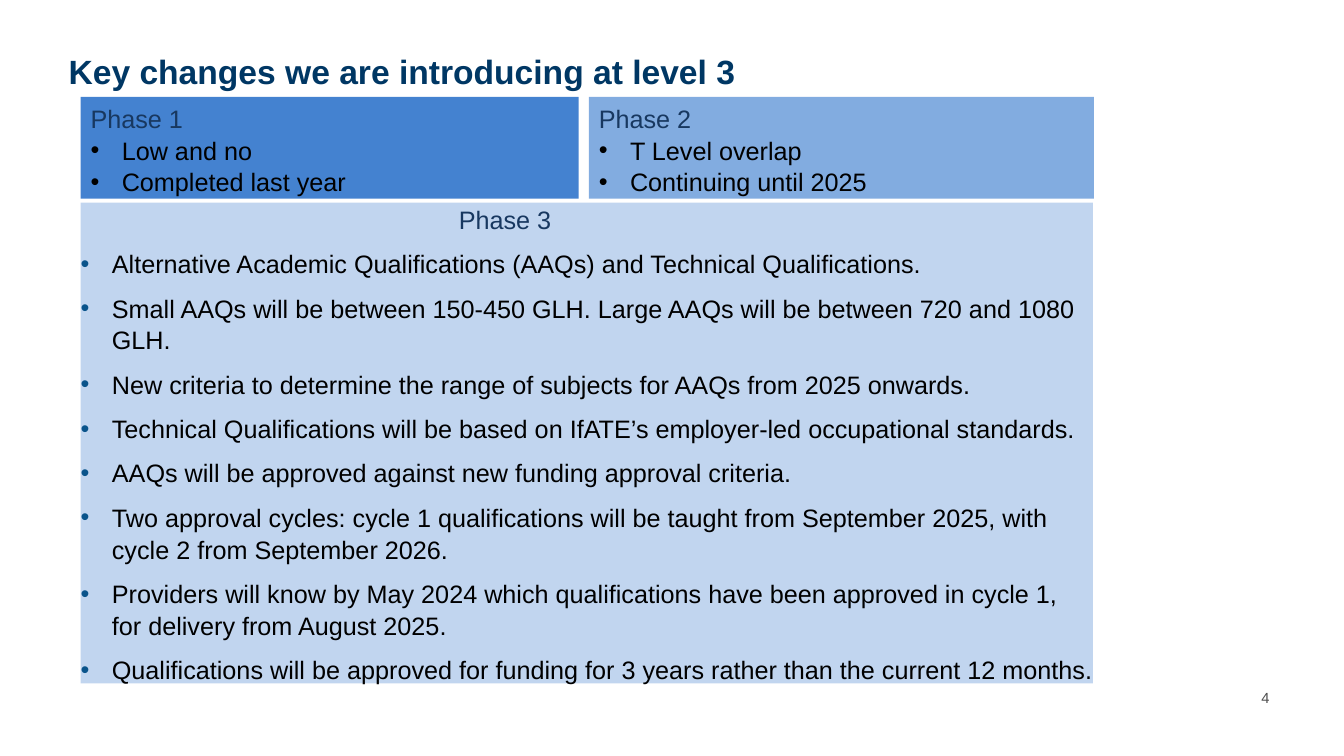
from lxml.etree import SubElement
from pptx import Presentation
from pptx.dml.color import RGBColor
from pptx.enum.shapes import MSO_SHAPE as SHAPE
from pptx.enum.text import MSO_ANCHOR as ANCHOR, MSO_AUTO_SIZE as AUTO, PP_ALIGN as ALIGN
from pptx.oxml.ns import qn
from pptx.util import Inches, Pt

COLORS = {"title": "003764", "heading": "183860", "text": "000000", "bullet": "0A548B",
          "number": "4D4D4D", "phase1": "4482D0", "phase2": "82ACE0", "phase3": "C1D5EF"}
INDENT = 0.31


def write(paragraph, text, size, color, bold=False, **formats):
    """Fill a paragraph with one run and set its paragraph formats."""
    run = paragraph.add_run()
    run.text = text
    for name, value in {"name": "Arial", "size": Pt(size), "bold": bold}.items():
        setattr(run.font, name, value)
    run.font.color.rgb = RGBColor.from_string(COLORS[color])
    for name, value in {"alignment": ALIGN.LEFT, "space_before": Pt(0), **formats}.items():
        setattr(paragraph, name, value)


def write_phase(frame, heading, points, heading_indent=0, bullet_color="text", gap=0):
    """Write a phase heading followed by its bulleted points."""
    for i, text in enumerate([heading, *points]):
        paragraph = frame.paragraphs[0] if i == 0 else frame.add_paragraph()
        write(paragraph, text, 18, "text" if i else "heading",
              line_spacing=1.05, space_after=Pt(gap))
        props = paragraph._p.get_or_add_pPr()
        props.set("marL", str(Inches(INDENT if i else heading_indent)))
        props.set("indent", str(Inches(-INDENT if i else 0)))
        if i:
            color = SubElement(props, qn("a:buClr"))
            SubElement(color, qn("a:srgbClr"), val=COLORS[bullet_color])
            SubElement(props, qn("a:buFont"), typeface="Arial")
            SubElement(props, qn("a:buChar"), char="•")
        else:
            SubElement(props, qn("a:buNone"))


deck = Presentation()
deck.slide_width, deck.slide_height = Inches(13.33), Inches(7.5)
slide = deck.slides.add_slide(deck.slide_layouts[1])
title, phase3 = slide.shapes.title, slide.placeholders[1]

# Title and body placeholders
for holder, box in ((title, (0.68, 0.55, 11.98, 0.56)), (phase3, (0.8, 2.01, 10.04, 4.77))):
    holder.left, holder.top, holder.width, holder.height = map(Inches, box)
    frame_formats = {"margin_left": 0, "margin_top": 0, "margin_right": 0, "margin_bottom": 0,
                     "vertical_anchor": ANCHOR.TOP, "auto_size": AUTO.NONE, "word_wrap": True}
    for name, value in frame_formats.items():
        setattr(holder.text_frame, name, value)

write(title.text_frame.paragraphs[0], "Key changes we are introducing at level 3",
      24, "title", bold=True, line_spacing=0.9)

# Phase 3
phase3.fill.solid()
phase3.fill.fore_color.rgb = RGBColor.from_string(COLORS["phase3"])
write_phase(phase3.text_frame, "Phase 3", [
    "Alternative Academic Qualifications (AAQs) and Technical Qualifications.",
    "Small AAQs will be between 150-450 GLH. Large AAQs will be between 720 and 1080 GLH.",
    "New criteria to determine the range of subjects for AAQs from 2025 onwards.",
    "Technical Qualifications will be based on IfATE’s employer-led occupational standards.",
    "AAQs will be approved against new funding approval criteria.",
    "Two approval cycles: cycle 1 qualifications will be taught from September 2025, "
    "with cycle 2 from September 2026.",
    "Providers will know by May 2024 which qualifications have been approved in cycle 1, "
    "for delivery from August 2025.",
    "Qualifications will be approved for funding for 3 years rather than the current 12 months.",
], heading_indent=3.75, bullet_color="bullet", gap=9)

# Phases 1 and 2
for heading, points, left, width, fill in (
    ("Phase 1", ["Low and no", "Completed last year"], 0.8, 4.94, "phase1"),
    ("Phase 2", ["T Level overlap", "Continuing until 2025"], 5.84, 5.01, "phase2"),
):
    phase = slide.shapes.add_shape(SHAPE.RECTANGLE, Inches(left), Inches(0.96),
                                   Inches(width), Inches(1.01))
    phase.shadow.inherit = False
    phase.fill.solid()
    phase.fill.fore_color.rgb = RGBColor.from_string(COLORS[fill])
    phase.line.fill.background()
    phase.text_frame.word_wrap = True
    phase.text_frame.vertical_anchor = ANCHOR.TOP
    write_phase(phase.text_frame, heading, points)

# Slide number
number = slide.shapes.add_textbox(Inches(11.87), Inches(6.78), Inches(0.82), Inches(0.4))
number.text_frame.word_wrap = True
write(number.text_frame.paragraphs[0], "4", 10.5, "number", alignment=ALIGN.RIGHT)

deck.save("out.pptx")
